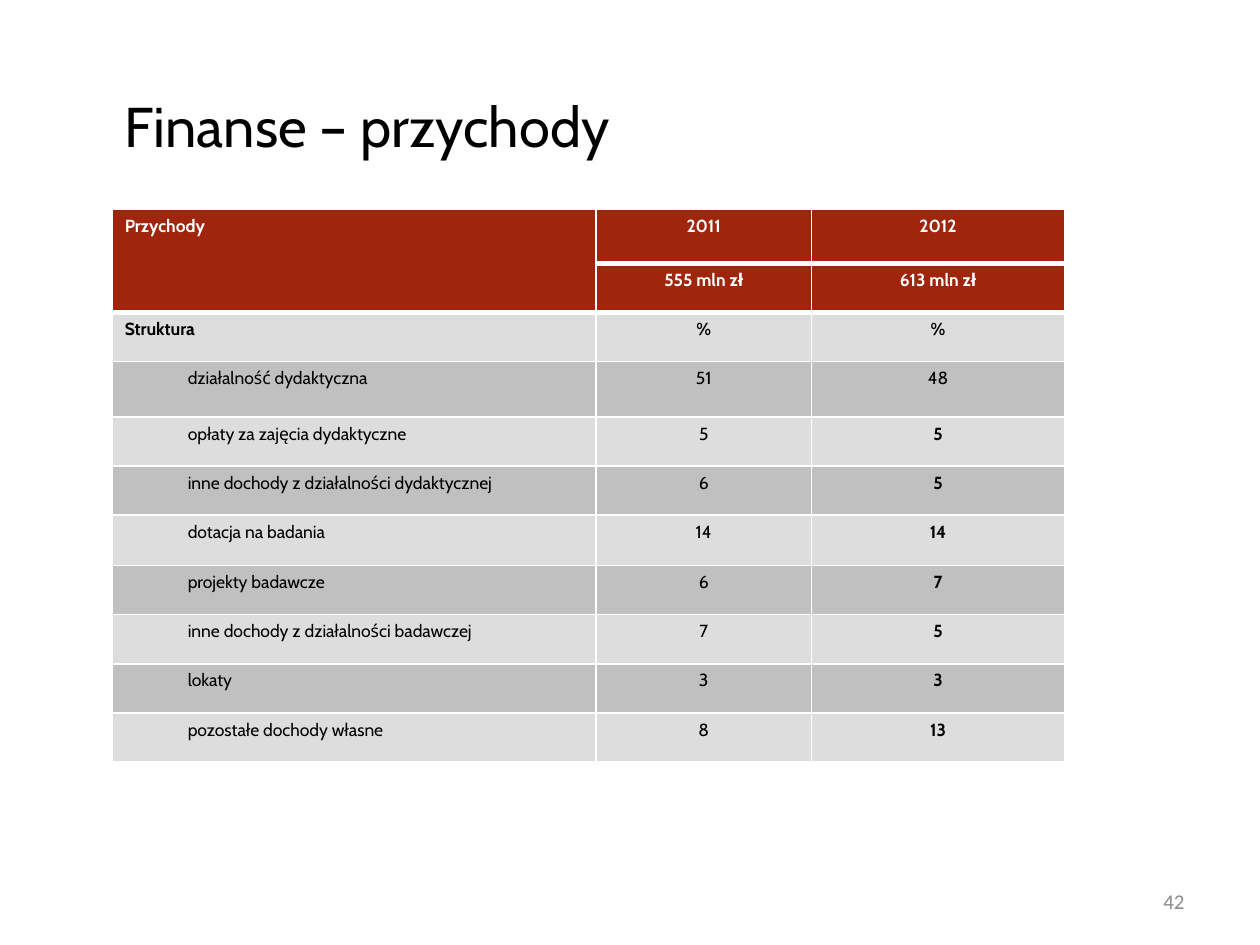
from lxml import etree
from pptx import Presentation
from pptx.dml.color import RGBColor
from pptx.enum.text import MSO_ANCHOR, PP_ALIGN
from pptx.oxml.ns import qn
from pptx.util import Inches, Pt

LEFT, CENTER, RIGHT = PP_ALIGN.LEFT, PP_ALIGN.CENTER, PP_ALIGN.RIGHT
MIDDLE = MSO_ANCHOR.MIDDLE

WHITE = RGBColor(0xFF, 0xFF, 0xFF)
BLACK = RGBColor(0, 0, 0)
RED = RGBColor(0x9F, 0x25, 0x0D)
LIGHT = RGBColor(0xDD, 0xDD, 0xDD)
DARK = RGBColor(0xC0, 0xC0, 0xC0)
GRAY = RGBColor(0x8C, 0x8C, 0x8C)

MARGIN = 0.89
COL_WIDTHS = [3.84, 1.71, 2.01]
ROW_HEIGHT = 0.39
TALL_ROWS = {0: 0.43, 3: 0.44, 6: 0.4}
HEADER_ROWS = 2

ROWS = [
    ("Przychody", "2011", "2012"),
    ("", "555 mln zł", "613 mln zł"),
    ("Struktura", "%", "%"),
    ("działalność dydaktyczna", "51", "48"),
    ("opłaty za zajęcia dydaktyczne", "5", "5"),
    ("inne dochody z działalności dydaktycznej", "6", "5"),
    ("dotacja na badania", "14", "14"),
    ("projekty badawcze", "6", "7"),
    ("inne dochody z działalności badawczej", "7", "5"),
    ("lokaty", "3", "3"),
    ("pozostałe dochody własne", "8", "13"),
]


def write(tf, text, align, color, **font):
    p = tf.paragraphs[0]
    p.alignment = align
    r = p.add_run()
    r.text = text
    for name, value in font.items():
        setattr(r.font, name, value)
    r.font.color.rgb = color
    return p


def set_borders(cell, widths):
    """Draw white borders; widths maps L, R, T, B to points."""
    tcPr = cell._tc.get_or_add_tcPr()
    for i, (side, width) in enumerate(widths.items()):
        ln = etree.Element(qn(f"a:ln{side}"), w=str(Pt(width)))
        fill = etree.SubElement(ln, qn("a:solidFill"))
        etree.SubElement(fill, qn("a:srgbClr"), val=str(WHITE))
        tcPr.insert(i, ln)


def style_cell(cell, row, col, text):
    header = row < HEADER_ROWS
    item = row > HEADER_ROWS
    cell.fill.solid()
    cell.fill.fore_color.rgb = RED if header else (DARK if row % 2 else LIGHT)
    set_borders(cell, {"L": 1, "R": 1,
                       "T": 3 if row in (1, 2) else 1,
                       "B": 3 if header else 1})
    if not text:
        return
    bold = not item or (col == 2 and row > 3)
    p = write(cell.text_frame, text, CENTER if col else LEFT,
              WHITE if header else BLACK, name="Cabin", size=Pt(10), bold=bold)
    if item and col == 0:
        p.level = 1
        p._p.get_or_add_pPr().set("marL", str(Inches(0.5)))


def add_income_table(s):
    heights = [TALL_ROWS.get(i, ROW_HEIGHT) for i in range(len(ROWS))]
    frame = s.shapes.add_table(
        len(ROWS), len(COL_WIDTHS), Inches(MARGIN), Inches(1.66),
        Inches(sum(COL_WIDTHS)), Inches(sum(heights)))
    table = frame.table
    for column, width in zip(table.columns, COL_WIDTHS):
        column.width = Inches(width)
    for row, height in zip(table.rows, heights):
        row.height = Inches(height)
    for i, values in enumerate(ROWS):
        for j, text in enumerate(values):
            style_cell(table.cell(i, j), i, j, text)
    table.cell(0, 0).merge(table.cell(1, 0))


def add_title(s, text):
    sp = s.shapes.title
    sp.left, sp.top, sp.width, sp.height = map(Inches, (MARGIN, 0.6, 8.24, 0.79))
    sp.text_frame.vertical_anchor = MIDDLE
    write(sp.text_frame, text, LEFT, BLACK, name="Cabin", size=Pt(32))


def add_page_number(s, number):
    sp = s.shapes.add_textbox(*map(Inches, (7.17, 6.95, 2.33, 0.4)))
    tf = sp.text_frame
    tf.word_wrap = True
    tf.vertical_anchor = MIDDLE
    write(tf, number, RIGHT, GRAY, name="Calibri", size=Pt(12))


def main():
    prs = Presentation()
    prs.slide_width, prs.slide_height = Inches(10), Inches(7.5)
    s = prs.slides.add_slide(prs.slide_layouts[5])  # title only
    add_title(s, "Finanse – przychody")
    add_income_table(s)
    add_page_number(s, "42")
    prs.save("out.pptx")


if __name__ == "__main__":
    main()
